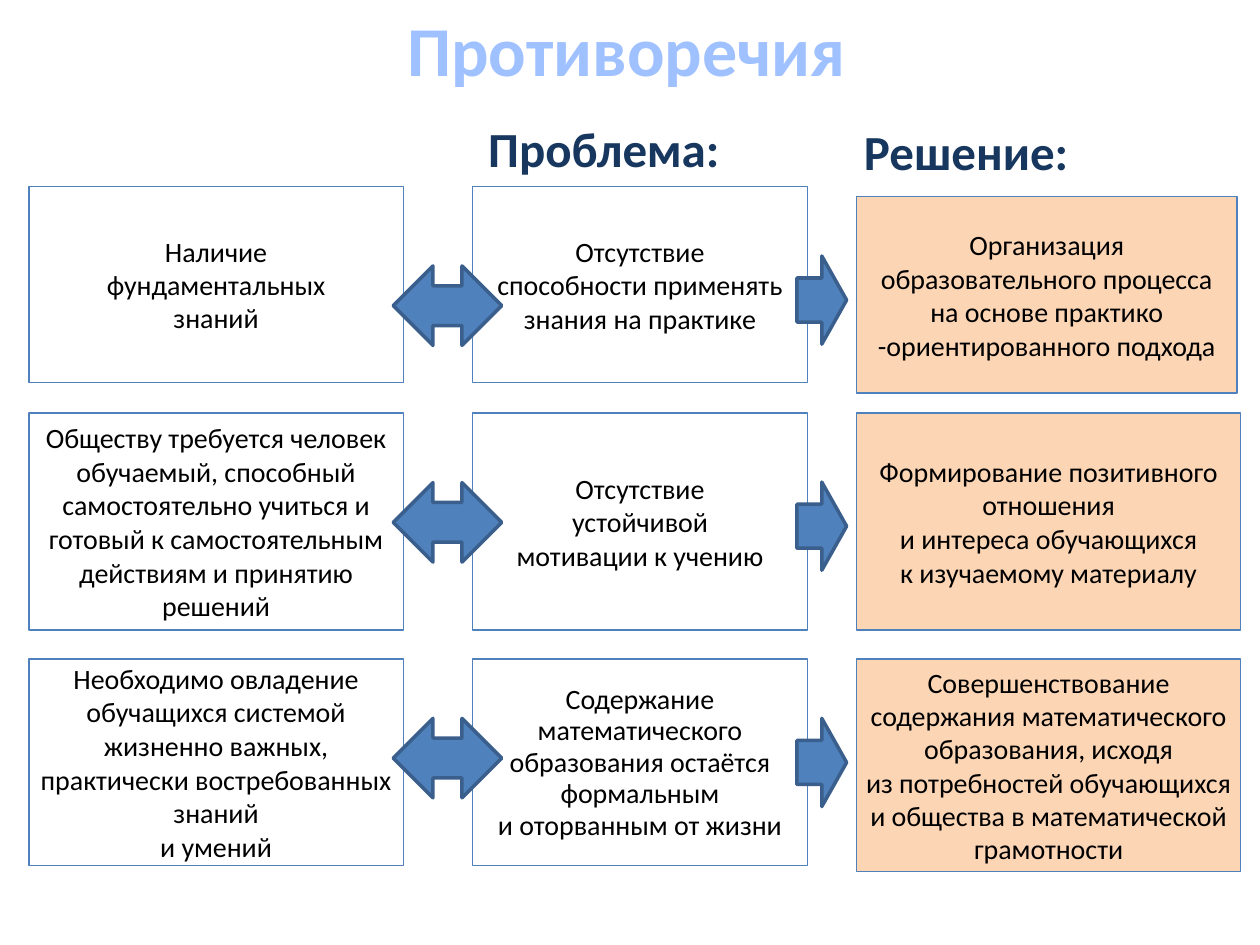
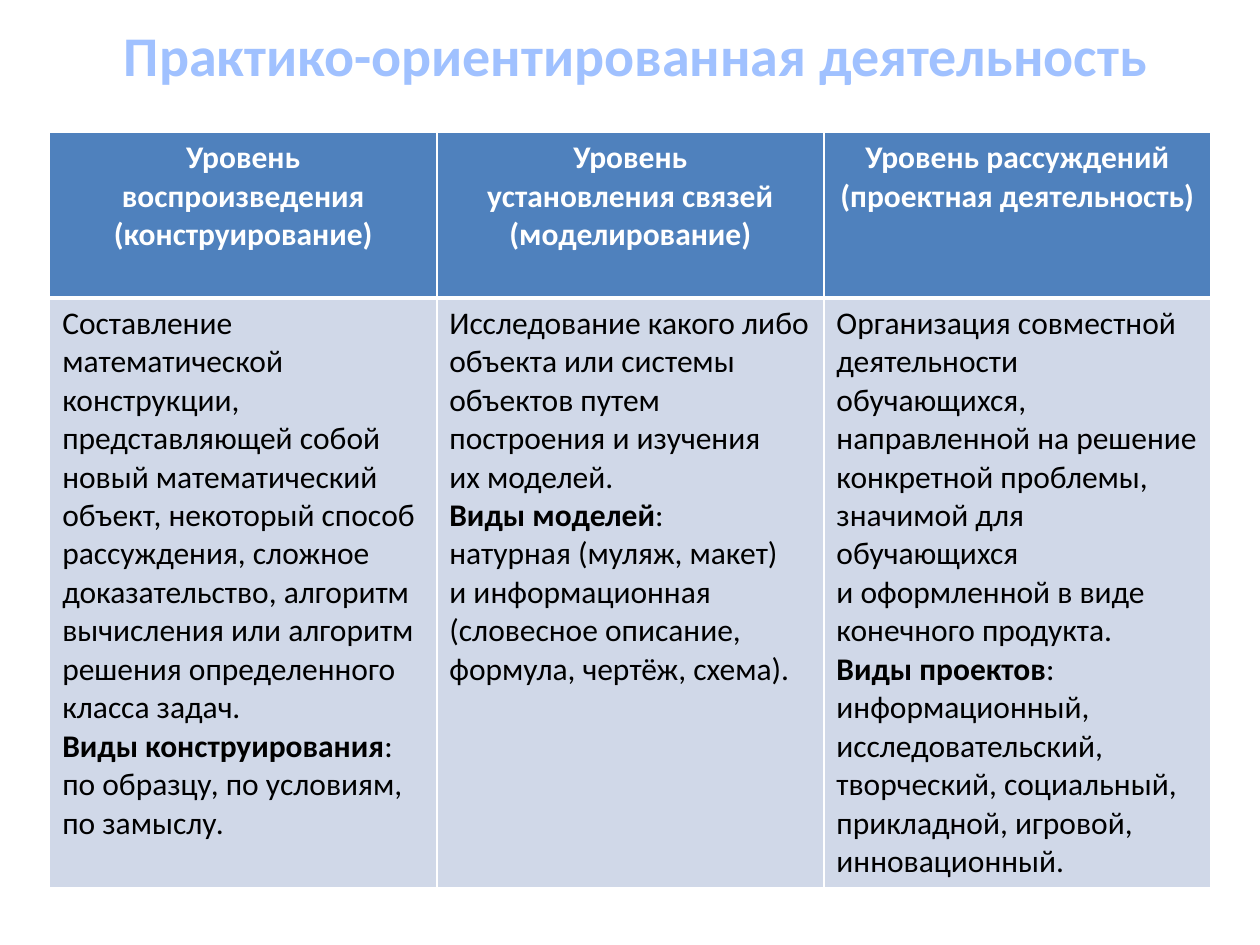
from dataclasses import dataclass
from typing import Any

from lxml import etree
from pptx import Presentation
from pptx import util as u
from pptx.dml.color import RGBColor
from pptx.enum import shapes, text
from pptx.oxml.ns import qn

Pt = u.Pt
FONT = "Calibri"
BLUE = RGBColor(0x4F, 0x81, 0xBD)
DARK_BLUE = RGBColor(0x3A, 0x5F, 0x8C)
NAVY = RGBColor(0x17, 0x37, 0x5E)
TITLE_BLUE = RGBColor(0xA0, 0xC1, 0xFF)
PEACH = RGBColor(0xFC, 0xD5, 0xB5)
PALE_BLUE = RGBColor(0xD0, 0xD8, 0xE8)
BLACK = RGBColor(0, 0, 0)
WHITE = RGBColor(0xFF, 0xFF, 0xFF)
CENTER, LEFT = text.PP_ALIGN.CENTER, text.PP_ALIGN.LEFT
MIDDLE = text.MSO_ANCHOR.MIDDLE


@dataclass(frozen=True)
class Box:
    """A frame in points."""
    left: float
    top: float
    width: float
    height: float

    def lengths(self) -> tuple:
        return tuple(Pt(v) for v in (self.left, self.top, self.width, self.height))


@dataclass(frozen=True)
class Statement:
    """A bordered text card; \\v in its wording breaks a line."""
    box: Box
    wording: str
    fill: RGBColor | None = None
    spacing: float | None = None
    inset: bool = True


@dataclass(frozen=True)
class Level:
    """One table column; ** in its description toggles bold."""
    heading: str
    description: str


ROW_TOPS = (106.5, 236, 376.5)
ROW_HEIGHTS = (112.3, 124, 118)


def card_box(left: float, width: float, row: int) -> Box:
    """Frame of a card in the given row."""
    return Box(left, ROW_TOPS[row], width, ROW_HEIGHTS[row])


STATEMENTS = (
    Statement(card_box(16.5, 214, 0), "Наличие\nфундаментальных\nзнаний", spacing=19),
    Statement(card_box(16.5, 214, 1), "Обществу требуется человек обучаемый, способный самостоятельно "
              "учиться и готовый к самостоятельным действиям и принятию решений"),
    Statement(card_box(16.5, 214, 2), "Необходимо овладение обучащихся системой жизненно важных, "
              "практически востребованных знаний\vи умений", inset=False),
    Statement(card_box(270, 191.5, 0), "Отсутствие\nспособности применять знания на практике"),
    Statement(card_box(270, 191.5, 1), "Отсутствие\nустойчивой\nмотивации к учению"),
    Statement(card_box(270, 191.5, 2), "Содержание математического образования остаётся формальным"
              "\vи оторванным от жизни", spacing=18),
    Statement(Box(489.5, 112.3, 217.4, 112.3), "Организация образовательного процесса на основе "
              "практико -ориентированного подхода", PEACH),
    Statement(card_box(489.5, 219.5, 1), "Формирование позитивного отношения\vи интереса обучающихся"
              "\vк изучаемому материалу", PEACH),
    Statement(Box(489.5, 376.5, 219.5, 121.7), "Совершенствование содержания математического образования, "
              "исходя\vиз потребностей обучающихся\vи общества в математической грамотности",
              PEACH, 19, False),
)
OPPOSITION_TOPS = (152, 275.8, 410.5)
SOLUTION_TOPS = (146.3, 275.5, 410.5)

LEVELS = (
    Level("Уровень воспроизведения\n(конструирование)",
          "Составление математической конструкции, представляющей собой новый математический объект, "
          "некоторый способ рассуждения, сложное доказательство, алгоритм вычисления или алгоритм "
          "решения определенного класса задач.\n**Виды конструирования**: по образцу, по условиям, "
          "по замыслу."),
    Level("Уровень\vустановления связей (моделирование)",
          "Исследование какого либо объекта или системы объектов путем построения и изучения"
          "\vих моделей.\n**Виды моделей**:\vнатурная (муляж, макет)\vи информационная "
          "(словесное описание, формула, чертёж, схема)."),
    Level("Уровень рассуждений\n(проектная деятельность)",
          "Организация совместной деятельности обучающихся, направленной на решение конкретной проблемы, "
          "значимой для обучающихся\vи оформленной в виде конечного продукта.\n**Виды проектов**: "
          "информационный, исследовательский, творческий, социальный, прикладной, игровой, "
          "инновационный."),
)


def write(frame: Any, wording: str, *, size: float, color: RGBColor = BLACK, bold: bool = False,
          align: Any = CENTER, spacing: float | None = None) -> None:
    """Fill a text frame with formatted paragraphs."""
    for index, line in enumerate(wording.split("\n")):
        paragraph = frame.paragraphs[0] if index == 0 else frame.add_paragraph()
        paragraph.alignment = align
        if spacing:
            paragraph.line_spacing = Pt(spacing)
        for part, stretch in enumerate(line.split("**")):
            for piece, words in enumerate(stretch.split("\v")):
                if piece:
                    paragraph.add_line_break()
                if words:
                    run = paragraph.add_run()
                    run.text = words
                    run.font.name, run.font.size = FONT, Pt(size)
                    run.font.bold = bold or part % 2 == 1
                    run.font.color.rgb = color


def clear_insets(frame: Any) -> None:
    """Remove the inner margins of a text frame."""
    frame.margin_left = frame.margin_right = frame.margin_top = frame.margin_bottom = 0


def add_label(slide: Any, box: Box, wording: str, size: float, color: RGBColor, wrap: bool = True) -> None:
    """Add a bold centred heading without a frame."""
    frame = slide.shapes.add_textbox(*box.lengths()).text_frame
    frame.word_wrap, frame.vertical_anchor = wrap, MIDDLE
    clear_insets(frame)
    write(frame, wording, size=size, color=color, bold=True)


def add_figure(slide: Any, kind: Any, box: Box, fill: RGBColor | None, line: RGBColor, weight: float) -> Any:
    """Add a preset shape with a flat fill and an outline."""
    figure = slide.shapes.add_shape(kind, *box.lengths())
    figure.shadow.inherit = False
    if fill is None:
        figure.fill.background()
    else:
        figure.fill.solid()
        figure.fill.fore_color.rgb = fill
    figure.line.color.rgb, figure.line.width = line, Pt(weight)
    return figure


def add_statement(slide: Any, statement: Statement) -> None:
    """Draw one text card."""
    card = add_figure(slide, shapes.MSO_SHAPE.RECTANGLE, statement.box, statement.fill, BLUE, 0.75)
    frame = card.text_frame
    frame.word_wrap, frame.vertical_anchor = True, MIDDLE
    if not statement.inset:
        clear_insets(frame)
    write(frame, statement.wording, size=16, spacing=statement.spacing)


def set_borders(cell: Any, **weights: float) -> None:
    """Give a cell white borders of the given weights by side."""
    properties = cell._tc.get_or_add_tcPr()
    for index, side in enumerate("LRTB"):
        line = etree.Element(qn(f"a:ln{side}"), w=str(Pt(weights.get(side, 1))))
        fill = etree.SubElement(line, qn("a:solidFill"))
        etree.SubElement(fill, qn("a:srgbClr"), val=str(WHITE))
        properties.insert(index, line)


def fill_cell(cell: Any, wording: str, fill: RGBColor, borders: dict[str, float], **style: Any) -> None:
    """Colour, border and write one table cell."""
    cell.fill.solid()
    cell.fill.fore_color.rgb = fill
    set_borders(cell, **borders)
    write(cell.text_frame, wording, size=18, **style)


def build_contradictions(slide: Any) -> None:
    """Build the slide of contradictions, problems and solutions."""
    add_label(slide, Box(34, 0, 648, 55.4), "Противоречия", 40, TITLE_BLUE)
    add_label(slide, Box(278, 67.7, 134, 34), "Проблема:", 28, NAVY, wrap=False)
    add_label(slide, Box(485, 69.5, 134, 34), "Решение:", 28, NAVY, wrap=False)
    for statement in STATEMENTS:
        add_statement(slide, statement)
    for opposition_top, solution_top in zip(OPPOSITION_TOPS, SOLUTION_TOPS):
        add_figure(slide, shapes.MSO_SHAPE.LEFT_RIGHT_ARROW, Box(224.7, opposition_top, 62, 45.4),
                   BLUE, DARK_BLUE, 2)
        add_figure(slide, shapes.MSO_SHAPE.RIGHT_ARROW, Box(455.4, solution_top, 28.4, 50.4),
                   BLUE, DARK_BLUE, 2)


def build_levels(slide: Any) -> None:
    """Build the slide with the table of activity levels."""
    add_label(slide, Box(39.5, 0, 648, 62), "Практико-ориентированная деятельность", 32, TITLE_BLUE)
    levels = slide.shapes.add_table(2, len(LEVELS), *Box(28.4, 75.8, 663.6, 431.5).lengths()).table
    for row, height in zip(levels.rows, (94.5, 337)):
        row.height = Pt(height)
    for index, level in enumerate(LEVELS):
        levels.columns[index].width = Pt(221.2)
        fill_cell(levels.cell(0, index), level.heading, BLUE, {"B": 3}, color=WHITE, bold=True)
        fill_cell(levels.cell(1, index), level.description, PALE_BLUE, {"T": 3}, align=LEFT)


def main() -> None:
    """Create and save the presentation."""
    deck = Presentation()
    deck.slide_width, deck.slide_height = Pt(720), Pt(540)
    for build in (build_contradictions, build_levels):
        build(deck.slides.add_slide(deck.slide_layouts[6]))
    deck.save("out.pptx")


if __name__ == "__main__":
    main()
